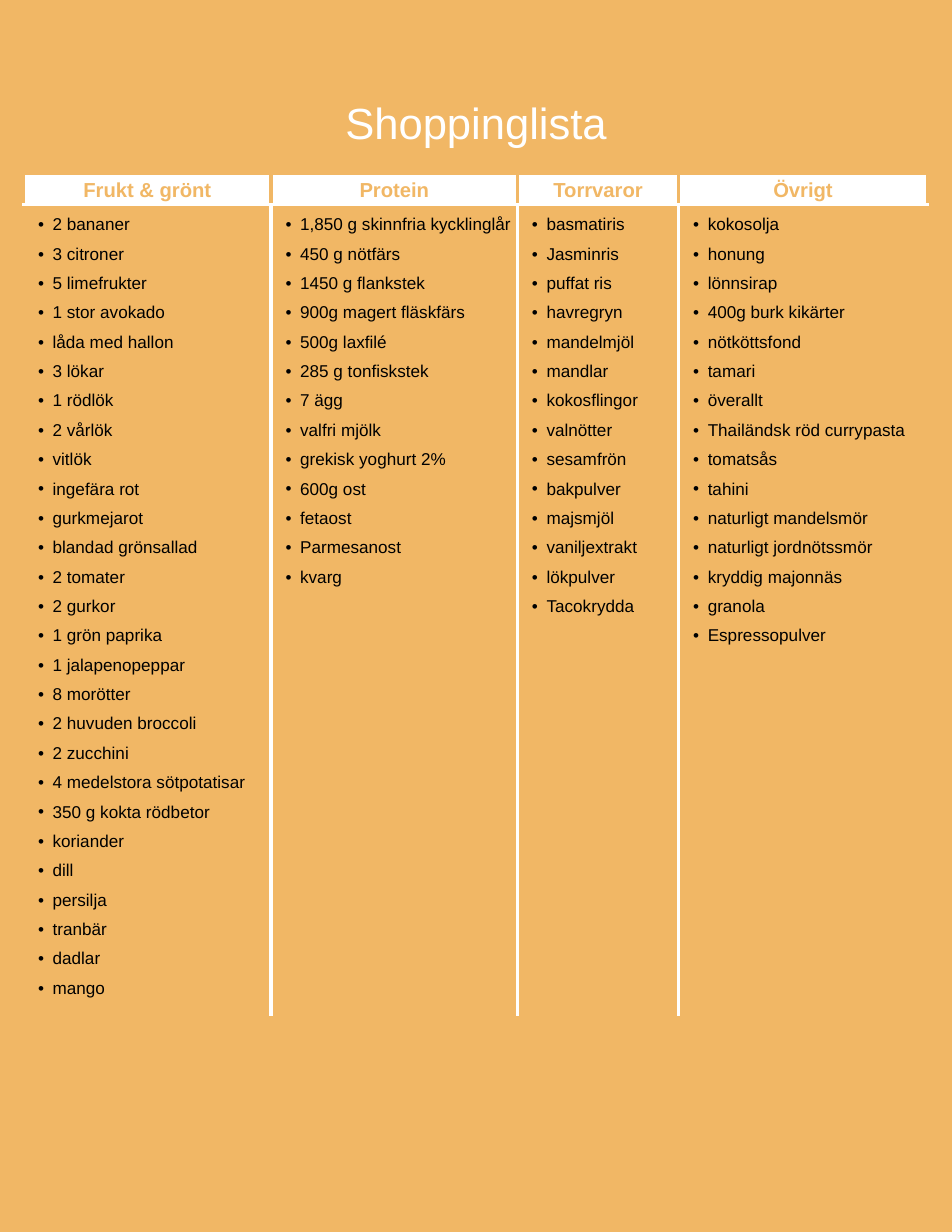
from lxml import etree
from pptx import Presentation
from pptx.dml.color import RGBColor
from pptx.enum import text
from pptx.oxml import ns
from pptx import util as u

COLUMNS, ROWS = 850, 1100
AMBER, WHITE, BLACK = "F1B765", "FFFFFF", "000000"

GROCERIES = {
    "Frukt & grönt": [
        "2 bananer", "3 citroner", "5 limefrukter", "1 stor avokado", "låda med hallon",
        "3 lökar", "1 rödlök", "2 vårlök", "vitlök", "ingefära rot", "gurkmejarot",
        "blandad grönsallad", "2 tomater", "2 gurkor", "1 grön paprika",
        "1 jalapenopeppar", "8 morötter", "2 huvuden broccoli", "2 zucchini",
        "4 medelstora sötpotatisar", "350 g kokta rödbetor", "koriander", "dill",
        "persilja", "tranbär", "dadlar", "mango",
    ],
    "Protein": [
        "1,850 g skinnfria kycklinglår", "450 g nötfärs", "1450 g flankstek",
        "900g magert fläskfärs", "500g laxfilé", "285 g tonfiskstek", "7 ägg",
        "valfri mjölk", "grekisk yoghurt 2%", "600g ost", "fetaost", "Parmesanost",
        "kvarg",
    ],
    "Torrvaror": [
        "basmatiris", "Jasminris", "puffat ris", "havregryn", "mandelmjöl", "mandlar",
        "kokosflingor", "valnötter", "sesamfrön", "bakpulver", "majsmjöl",
        "vaniljextrakt", "lökpulver", "Tacokrydda",
    ],
    "Övrigt": [
        "kokosolja", "honung", "lönnsirap", "400g burk kikärter", "nötköttsfond",
        "tamari", "överallt", "Thailändsk röd currypasta", "tomatsås", "tahini",
        "naturligt mandelsmör", "naturligt jordnötssmör", "kryddig majonnäs", "granola",
        "Espressopulver",
    ],
}


def color(code):
    return RGBColor.from_string(code)


def write(para, words, size, ink, leading, bold=False, align=None, bullet=None):
    para.alignment = align
    para.line_spacing = u.Pt(leading)
    span = para.add_run()
    span.text = words
    span.font.name = "Arial"
    span.font.size = u.Pt(size)
    span.font.bold = bold
    span.font.color.rgb = color(ink)
    if bullet:
        para.level = 1
        properties = para._p.get_or_add_pPr()
        properties.set("marL", str(u.Inches(0.26)))
        properties.set("indent", str(u.Inches(-0.13)))
        etree.SubElement(properties, ns.qn("a:buFont"), typeface="Arial")
        etree.SubElement(properties, ns.qn("a:buChar"), char=bullet)


class ShoppingPage:
    """Holds the style and the current slide of a shopping list."""

    def __init__(self, deck):
        self.column = deck.slide_width / COLUMNS
        self.row = deck.slide_height / ROWS
        self.page = deck.slides.add_slide(deck.slide_layouts[6])
        backdrop = self.page.background.fill
        backdrop.solid()
        backdrop.fore_color.rgb = color(AMBER)

    def place(self, left, top, width, height):
        return (round(left * self.column), round(top * self.row),
                round(width * self.column), round(height * self.row))

    def title(self, words, *area):
        frame = self.page.shapes.add_textbox(*self.place(*area)).text_frame
        self.clear_margins(frame)
        frame.word_wrap = True
        frame.auto_size = text.MSO_AUTO_SIZE.SHAPE_TO_FIT_TEXT
        write(frame.paragraphs[0], words, 28, WHITE, 39.2, align=text.PP_ALIGN.CENTER)

    def clear_margins(self, box):
        box.margin_left = box.margin_right = box.margin_top = box.margin_bottom = 0

    def borders(self, cell, **edges):
        properties = cell._tc.get_or_add_tcPr()
        for side in "LRTB":
            line = etree.SubElement(properties, ns.qn(f"a:ln{side}"), w=str(u.Pt(2.25)))
            fill = etree.SubElement(line, ns.qn("a:solidFill"))
            etree.SubElement(fill, ns.qn("a:srgbClr"), val=edges.get(side, AMBER))

    def header(self, cell, words):
        self.clear_margins(cell)
        cell.vertical_anchor = text.MSO_ANCHOR.MIDDLE
        self.borders(cell, B=WHITE)
        cell.fill.solid()
        cell.fill.fore_color.rgb = color(WHITE)
        write(cell.text_frame.paragraphs[0], words, 13, AMBER, 15.6,
              bold=True, align=text.PP_ALIGN.CENTER)

    def items(self, cell, names, first, last):
        self.clear_margins(cell)
        self.borders(cell, T=WHITE, L=AMBER if first else WHITE, R=AMBER if last else WHITE)
        cell.fill.background()
        frame = cell.text_frame
        for index, name in enumerate(names):
            para = frame.add_paragraph() if index else frame.paragraphs[0]
            write(para, name, 11, BLACK, 18.9, bullet="•")

    def table(self, groups, left, top, widths, heights):
        area = self.place(left, top, sum(widths), sum(heights))
        table = self.page.shapes.add_table(len(heights), len(widths), *area).table
        table.first_row = table.horz_banding = False
        for row, height in zip(table.rows, heights):
            row.height = round(height * self.row)
        for index, (heading, names) in enumerate(groups.items()):
            table.columns[index].width = round(widths[index] * self.column)
            self.header(table.cell(0, index), heading)
            self.items(table.cell(1, index), names, index == 0, index == len(groups) - 1)


def main():
    deck = Presentation()
    deck.slide_width, deck.slide_height = u.Inches(8.5), u.Inches(11)
    page = ShoppingPage(deck)
    page.table(GROCERIES, 21, 155, widths=(221, 220, 144, 222), heights=(28, 723))
    page.title("Shoppinglista", 85, 78, 680, 54)
    deck.save("out.pptx")


if __name__ == "__main__":
    main()
